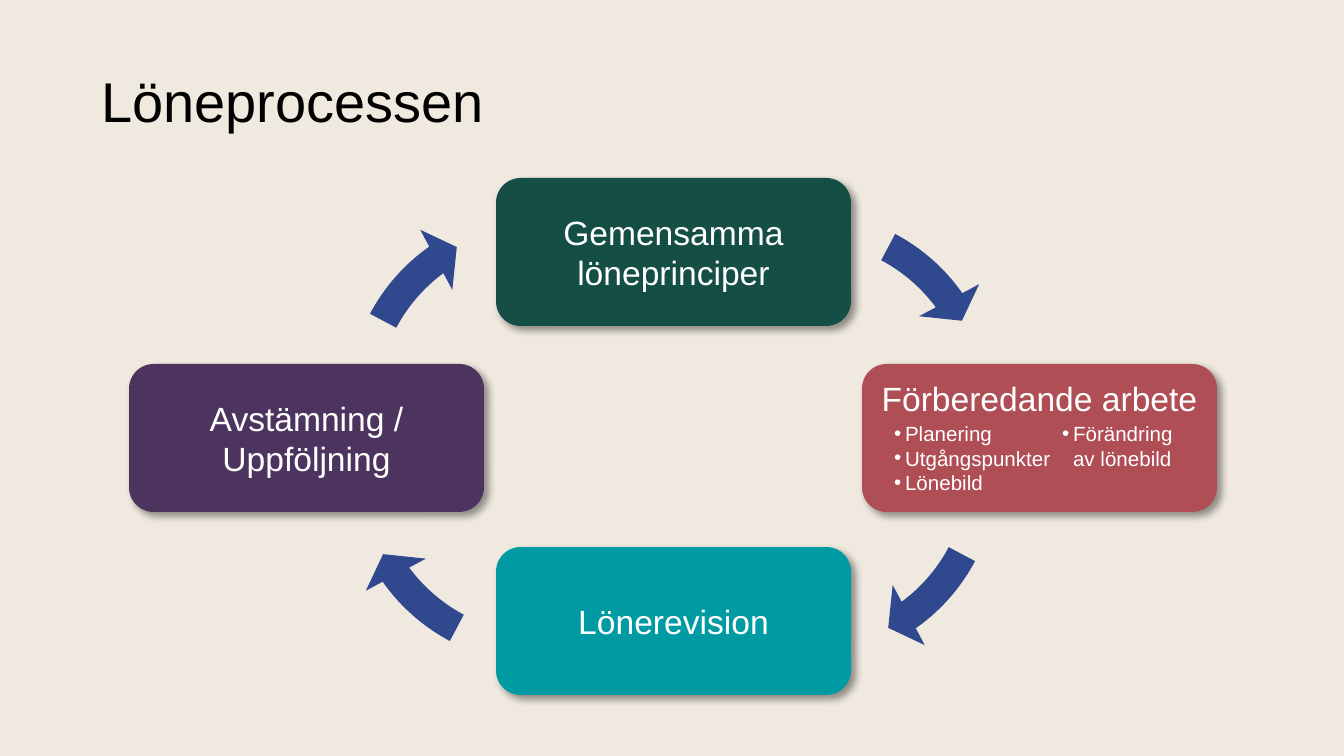
from lxml.etree import SubElement
from pptx import Presentation
from pptx.dml.color import RGBColor
from pptx.enum.shapes import MSO_SHAPE as Preset
from pptx.enum.text import MSO_ANCHOR as Anchor, MSO_AUTO_SIZE as AutoSize, PP_ALIGN as Align
from pptx.oxml.ns import qn
from pptx.util import Pt

PX = 914400 / 134.4
CREAM = RGBColor(0xEF, 0xE9, 0xDF)
BLACK = RGBColor(0, 0, 0)
WHITE = RGBColor(0xFF, 0xFF, 0xFF)
GREEN = RGBColor(0x15, 0x4E, 0x45)
RED = RGBColor(0xAF, 0x4E, 0x55)
TEAL = RGBColor(0x00, 0x9B, 0xA2)
PURPLE = RGBColor(0x4D, 0x34, 0x5F)
BLUE = RGBColor(0x30, 0x48, 0x8E)


def px(*lengths):
    return [round(length * PX) for length in lengths]


def write(shape, *lines, size=18, color=WHITE, align=Align.CENTER,
          anchor=Anchor.MIDDLE, inset=0, spacing=1.0, bullet=None):
    frame = shape.text_frame
    frame.word_wrap = True
    frame.auto_size = AutoSize.NONE
    frame.vertical_anchor = anchor
    frame.margin_left = frame.margin_right = 0
    frame.margin_top = frame.margin_bottom = px(inset)[0]
    for index, line in enumerate(lines):
        paragraph = frame.add_paragraph() if index else frame.paragraphs[0]
        if bullet:
            properties = paragraph._p.get_or_add_pPr()
            properties.set("marL", str(px(11)[0]))
            properties.set("indent", str(px(-11)[0]))
            SubElement(properties, qn("a:buChar")).set("char", bullet)
        paragraph.alignment = align
        paragraph.line_spacing = spacing
        paragraph.space_before = Pt(0)
        run = paragraph.add_run()
        run.text = line
        run.font.name = "Arial"
        run.font.size = Pt(size)
        run.font.color.rgb = color


deck = Presentation()
deck.slide_width, deck.slide_height = px(1344, 756)
slide = deck.slides.add_slide(deck.slide_layouts[3])
slide.background.fill.solid()
slide.background.fill.fore_color.rgb = CREAM

title, activities, changes = slide.placeholders
title.left, title.top, title.width, title.height = px(101, 31, 1099, 146)
write(title, "Löneprocessen", size=30, color=BLACK, align=Align.LEFT, spacing=0.9)

steps = [
    (129, 364, PURPLE, "Avstämning / Uppföljning", Anchor.MIDDLE),
    (496, 547, TEAL, "Lönerevision", Anchor.MIDDLE),
    (496, 178, GREEN, "Gemensamma löneprinciper", Anchor.MIDDLE),
    (862, 364, RED, "Förberedande arbete", Anchor.TOP),
]
for left, top, color, label, anchor in steps:
    step = slide.shapes.add_shape(Preset.ROUNDED_RECTANGLE, *px(left, top, 355, 148))
    step.fill.solid()
    step.fill.fore_color.rgb = color
    step.line.fill.background()
    step.shadow.inherit = False
    effects = step._element.spPr.find(qn("a:effectLst"))
    shadow = SubElement(effects, qn("a:outerShdw"), blurRad=str(Pt(4)),
                        dist=str(Pt(3)), dir="2700000", algn="tl", rotWithShape="0")
    shade = SubElement(shadow, qn("a:srgbClr"), val="000000")
    SubElement(shade, qn("a:alpha"), val="40000")
    write(step, label, anchor=anchor, inset=7)

details = [
    (activities, (894, 421, 160, 75), ["Planering", "Utgångspunkter", "Lönebild"]),
    (changes, (1062, 421, 125, 75), ["Förändring av lönebild"]),
]
for column, place, items in details:
    column.left, column.top, column.width, column.height = px(*place)
    write(column, *items, size=11, align=Align.LEFT, anchor=Anchor.TOP, bullet="•")
    slide.shapes._spTree.append(column._element)

QUARTER = 54
for turn, (left, top) in enumerate([(591, 257), (328, 257), (328, 192), (591, 192)]):
    arrow = slide.shapes.add_shape(Preset.CIRCULAR_ARROW, *px(left, top, 426, 426))
    arrow.rotation = 45
    head = 5.51 + QUARTER * turn
    tail = (QUARTER * turn - 10.16) % (4 * QUARTER)
    for index, value in enumerate([0.07, 4.65, head, tail, 0.08]):
        arrow.adjustments[index] = value
    arrow.fill.solid()
    arrow.fill.fore_color.rgb = BLUE
    arrow.line.fill.background()
    arrow.shadow.inherit = False

deck.save("out.pptx")
